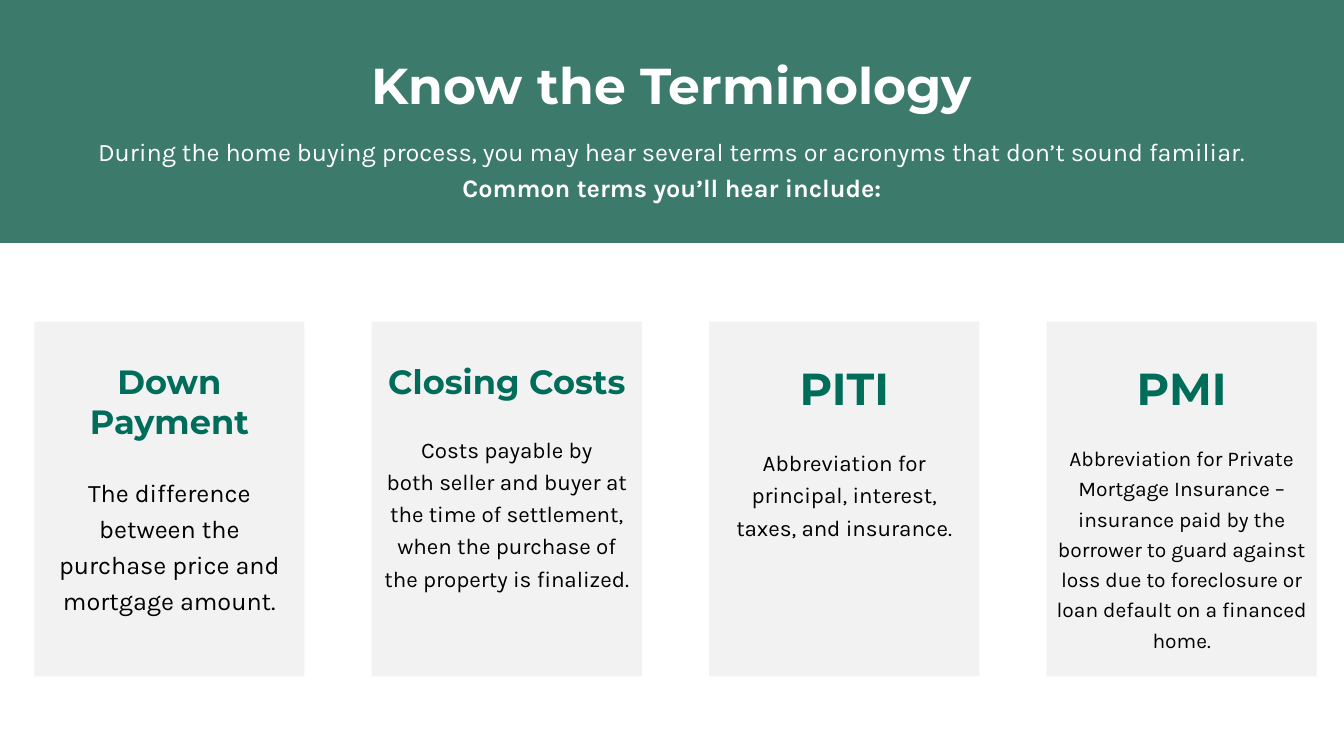
from dataclasses import dataclass

from pptx import Presentation
from pptx.dml.color import RGBColor
from pptx.enum.shapes import MSO_SHAPE
from pptx.enum.text import MSO_ANCHOR, MSO_AUTO_SIZE, PP_ALIGN
from pptx.shapes.autoshape import Shape
from pptx.slide import Slide
from pptx.text.text import TextFrame
from pptx.util import Inches, Pt


@dataclass(frozen=True)
class Theme:
    heading_font: str = "Montserrat"
    body_font: str = "Karla"
    band: RGBColor = RGBColor(0x3C, 0x7A, 0x6B)
    card: RGBColor = RGBColor(0xF2, 0xF2, 0xF2)
    term: RGBColor = RGBColor(0x00, 0x6C, 0x5A)
    light: RGBColor = RGBColor(0xFF, 0xFF, 0xFF)
    dark: RGBColor = RGBColor(0x00, 0x00, 0x00)
    title_size: float = 36
    intro_size: float = 18
    body_spacing: float = 1.2


@dataclass(frozen=True)
class Box:
    left: float
    top: float
    width: float
    height: float

    def lengths(self) -> tuple[Inches, Inches, Inches, Inches]:
        return Inches(self.left), Inches(self.top), Inches(self.width), Inches(self.height)


@dataclass(frozen=True)
class Style:
    font: str
    size: float
    color: RGBColor
    bold: bool = False
    line_spacing: float = 1.0
    space_after: float = 0


@dataclass(frozen=True)
class Term:
    name: str
    definition: tuple[str, ...]
    name_size: float
    definition_size: float
    gap: float
    text_height: float


THEME = Theme()
SLIDE_WIDTH, SLIDE_HEIGHT = 13.33, 7.5
CARD_LEFT, CARD_TOP, CARD_WIDTH, CARD_HEIGHT = 0.34, 3.19, 2.68, 3.52
LAST_CARD_LEFT = 10.38
TEXT_TOP = 3.53

TERMS = (
    Term("Down Payment",
         ("The difference between the", "purchase price and mortgage amount."),
         24, 18, 21, 2.63),
    Term("Closing Costs",
         ("Costs payable by",
          "both seller and buyer at the time of settlement, "
          "when the purchase of the property is finalized."),
         24, 16, 21, 2.39),
    Term("PITI",
         ("Abbreviation for principal, interest, taxes, and insurance.",),
         32, 16, 21, 1.88),
    Term("PMI",
         ("Abbreviation for Private Mortgage Insurance – insurance paid by the borrower "
          "to guard against loss due to foreclosure or loan default on a financed home.",),
         32, 15, 18.7, 3.07),
)


def add_rectangle(slide: Slide, box: Box, color: RGBColor) -> Shape:
    shape = slide.shapes.add_shape(MSO_SHAPE.RECTANGLE, *box.lengths())
    shape.shadow.inherit = False
    shape.fill.solid()
    shape.fill.fore_color.rgb = color
    shape.line.fill.background()
    return shape


def write_lines(frame: TextFrame, lines: list[tuple[str, Style]]) -> None:
    frame.word_wrap = True
    frame.auto_size = MSO_AUTO_SIZE.NONE
    frame.vertical_anchor = MSO_ANCHOR.TOP
    for index, (text, style) in enumerate(lines):
        paragraph = frame.add_paragraph() if index else frame.paragraphs[0]
        paragraph.alignment = PP_ALIGN.CENTER
        paragraph.line_spacing = style.line_spacing
        paragraph.space_before = Pt(0)
        paragraph.space_after = Pt(style.space_after)
        run = paragraph.add_run()
        run.text = text
        run.font.name = style.font
        run.font.size = Pt(style.size)
        run.font.bold = style.bold
        run.font.color.rgb = style.color


def add_text(slide: Slide, box: Box, lines: list[tuple[str, Style]]) -> None:
    write_lines(slide.shapes.add_textbox(*box.lengths()).text_frame, lines)


def add_header(slide: Slide) -> None:
    title = slide.shapes.title
    band = add_rectangle(slide, Box(0, 0, SLIDE_WIDTH, 2.41), THEME.band)
    title.element.addprevious(band.element)
    title.left, title.top, title.width, title.height = Box(0, 0.37, SLIDE_WIDTH, 0.83).lengths()
    title_style = Style(THEME.heading_font, THEME.title_size, THEME.light, True, THEME.body_spacing)
    write_lines(title.text_frame, [("Know the Terminology", title_style)])
    intro, lead = (
        Style(THEME.body_font, THEME.intro_size, THEME.light, bold, THEME.body_spacing)
        for bold in (False, True)
    )
    add_text(slide, Box(0, 1.24, SLIDE_WIDTH, 0.81), [
        ("During the home buying process, you may hear several terms or acronyms "
         "that don’t sound familiar.", intro),
        ("Common terms you’ll hear include:", lead),
    ])


def add_term_card(slide: Slide, term: Term, left: float) -> None:
    add_rectangle(slide, Box(left, CARD_TOP, CARD_WIDTH, CARD_HEIGHT), THEME.card)
    name_style = Style(THEME.heading_font, term.name_size, THEME.term, True, space_after=term.gap)
    definition_style = Style(THEME.body_font, term.definition_size, THEME.dark,
                             line_spacing=THEME.body_spacing)
    lines = [(term.name, name_style)]
    lines += [(text, definition_style) for text in term.definition]
    add_text(slide, Box(left, TEXT_TOP, CARD_WIDTH, term.text_height), lines)


def main() -> None:
    presentation = Presentation()
    presentation.slide_width = Inches(SLIDE_WIDTH)
    presentation.slide_height = Inches(SLIDE_HEIGHT)
    slide = presentation.slides.add_slide(presentation.slide_layouts.get_by_name("Title Only"))
    add_header(slide)
    pitch = (LAST_CARD_LEFT - CARD_LEFT) / (len(TERMS) - 1)
    for index, term in enumerate(TERMS):
        add_term_card(slide, term, CARD_LEFT + index * pitch)
    presentation.save("out.pptx")


if __name__ == "__main__":
    main()
